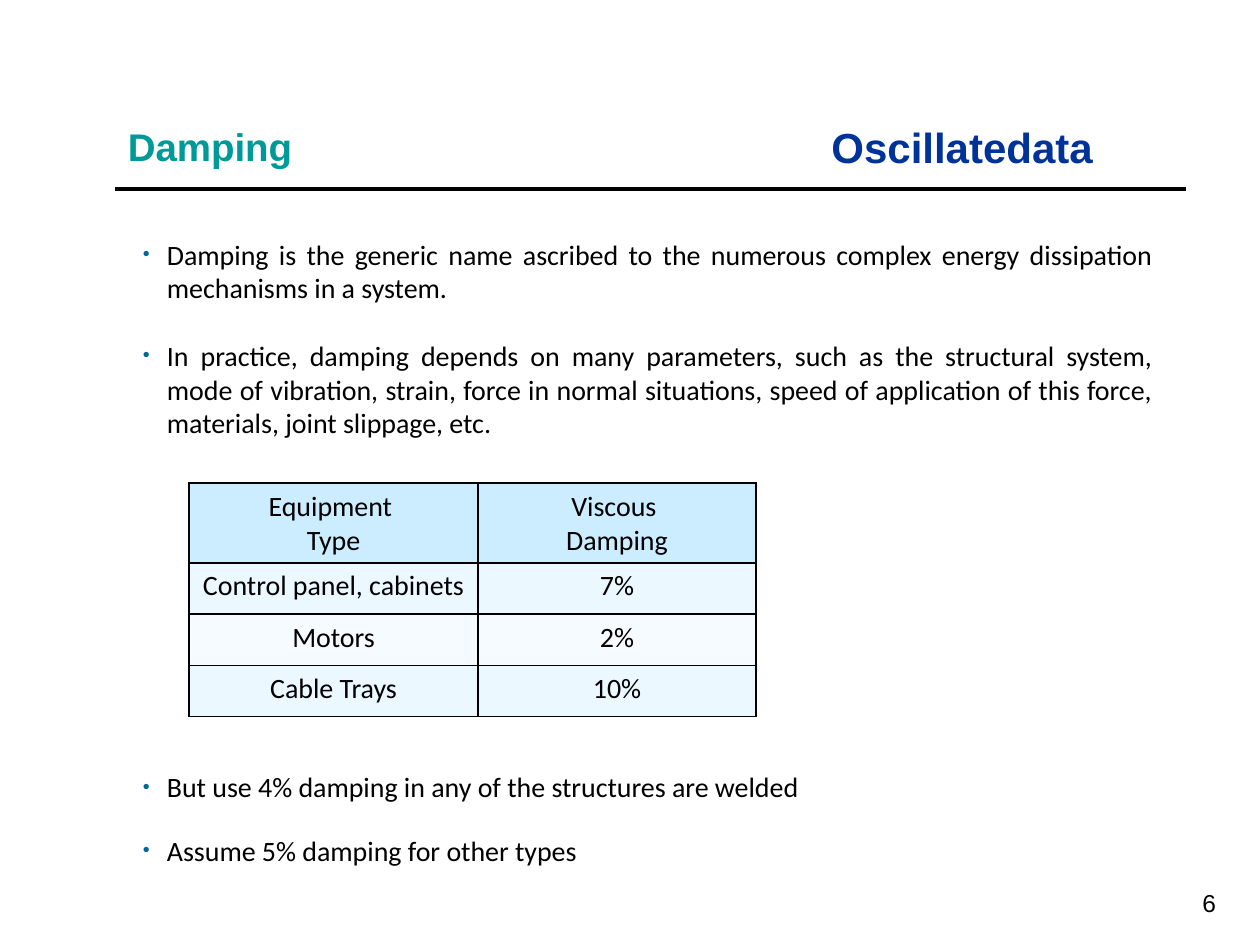
from pptx import Presentation
from pptx.dml.color import RGBColor
from pptx.enum.shapes import MSO_CONNECTOR
from pptx.enum.text import MSO_ANCHOR, PP_ALIGN
from pptx.oxml import parse_xml
from pptx.oxml.ns import nsdecls
from pptx.util import Inches, Pt
from lxml import etree

LEFT, MID, RIGHT, FULL = PP_ALIGN.LEFT, PP_ALIGN.CENTER, PP_ALIGN.RIGHT, PP_ALIGN.JUSTIFY
TOP, CENTER = MSO_ANCHOR.TOP, MSO_ANCHOR.MIDDLE
STRAIGHT = MSO_CONNECTOR.STRAIGHT
UNIT = Inches(10) / 120
BLACK = "000000"

POINTS = [
    (0, "Damping is the generic name ascribed to the numerous complex energy "
        "dissipation mechanisms in a system. "),
    (19.5, "In practice, damping depends on many parameters, such as the structural "
           "system, mode of vibration, strain, force in normal situations, speed of "
           "application of this force, materials, joint slippage, etc."),
    (189, "But use 4% damping in any of the structures are welded"),
    (17, "Assume 5% damping for other types"),
]
ROWS = [
    ("CCECFF", "Equipment \nType", "Viscous \nDamping"),
    ("ECF8FF", "Control panel, cabinets", "7%"),
    ("F6FBFF", "Motors", "2%"),
    ("ECF8FF", "Cable Trays", "10%"),
]


def grid(*cells):
    return [round(n * UNIT) for n in cells]


def rgb(code):
    return RGBColor.from_string(code)


def style(frame, size, face, color, bold=False, align=LEFT):
    for para in frame.paragraphs:
        para.alignment = align
        for run in para.runs:
            run.font.size = Pt(size)
            run.font.name = face
            run.font.bold = bold
            run.font.color.rgb = rgb(color)


def label(slide, box, text, size, color, bold=False, align=LEFT, anchor=TOP, wrap=True):
    frame = slide.shapes.add_textbox(*grid(*box)).text_frame
    frame.word_wrap = wrap
    frame.vertical_anchor = anchor
    frame.text = text
    style(frame, size, "Arial", color, bold, align)
    return frame


def header(slide, box):
    x, y, w, h = box
    label(slide, (x + 67, y, 28, 6), "Oscillatedata", 24, "003399", True, wrap=False)
    title = label(slide, (x, y + 1, 47, 5), "Damping", 22, "009999", True, anchor=CENTER)
    title.paragraphs[0].line_spacing = 0.7
    rule = slide.shapes.add_connector(STRAIGHT, *grid(x, y + h, x + w, y + h))
    rule.line.color.rgb = rgb(BLACK)
    rule.line.width = Pt(2.25)
    rule._element.spPr.append(parse_xml(f"<a:effectLst {nsdecls('a')}/>"))


def bullet(para):
    props = para._p.get_or_add_pPr()
    props.set("marL", str(Inches(0.31)))
    props.set("indent", str(Inches(-0.19)))
    for part in (
        f'<a:buClr {nsdecls("a")}><a:srgbClr val="006699"/></a:buClr>',
        f'<a:buSzPct {nsdecls("a")} val="70000"/>',
        f'<a:buFont {nsdecls("a")} typeface="Arial"/>',
        f'<a:buChar {nsdecls("a")} char="•"/>',
    ):
        props.append(parse_xml(part))


def body(slide, box):
    frame = slide.shapes.add_textbox(*grid(*box)).text_frame
    frame.word_wrap = True
    frame.text = "\n".join(text for _, text in POINTS)
    style(frame, 16, "Calibri", BLACK, align=FULL)
    for para, (gap, _) in zip(frame.paragraphs, POINTS):
        para.space_before = Pt(gap)
        bullet(para)


def border(cell):
    props = cell._tc.get_or_add_tcPr()
    for at, side in enumerate(("lnL", "lnR", "lnT", "lnB")):
        edge = etree.fromstring(
            f'<a:{side} {nsdecls("a")} w="{Pt(1)}"><a:solidFill>'
            f'<a:srgbClr val="{BLACK}"/></a:solidFill></a:{side}>')
        props.insert(at, edge)


def chart(slide, box):
    x, y, w, h = box
    table = slide.shapes.add_table(len(ROWS), 2, *grid(x, y, w, h)).table
    for col, share in zip(table.columns, (0.51, 0.49)):
        col.width = round(w * share * UNIT)
    for row, share in zip(table.rows, (0.34, 0.22, 0.22, 0.22)):
        row.height = round(h * share * UNIT)
    for r, (fill, *texts) in enumerate(ROWS):
        for c, text in enumerate(texts):
            cell = table.cell(r, c)
            cell.text_frame.text = text
            style(cell.text_frame, 16, "Calibri", BLACK, align=MID)
            cell.fill.solid()
            cell.fill.fore_color.rgb = rgb(fill)
            border(cell)


def main():
    deck = Presentation()
    deck.slide_width, deck.slide_height = grid(120, 90)
    slide = deck.slides.add_slide(deck.slide_layouts[6])
    label(slide, (92, 83, 25, 6), "6", 14, "010000", align=RIGHT, anchor=CENTER)
    header(slide, (11, 11, 102, 7))
    body(slide, (11, 22, 100, 62.6))
    chart(slide, (18, 46, 54, 22.2))
    deck.save("out.pptx")


if __name__ == "__main__":
    main()
